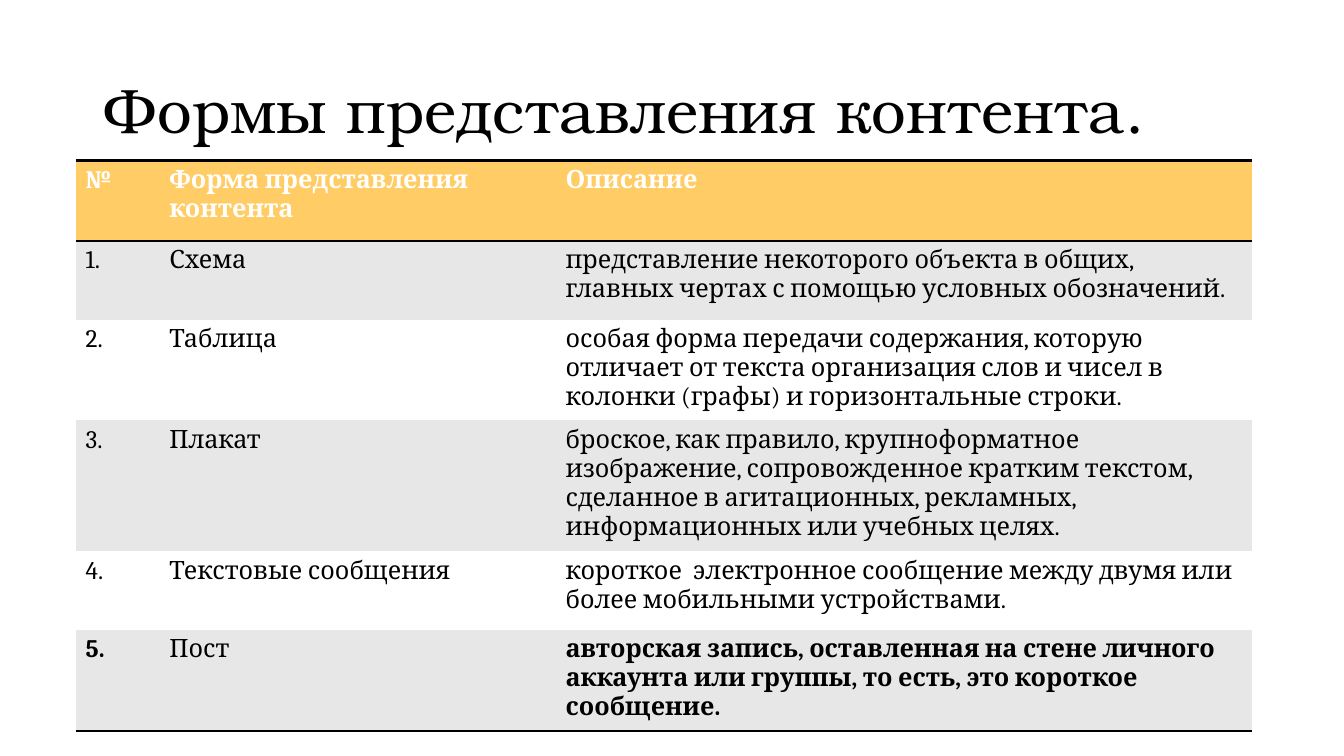
from typing import NamedTuple

from lxml import etree
from pptx import Presentation, util as u
from pptx.dml.color import RGBColor
from pptx.enum import text
from pptx.oxml.ns import qn

COLORS = {"black": "000000", "white": "FFFFFF", "amber": "FFCC66", "grey": "E7E7E7"}
NO_STYLE_NO_GRID = "{2D5ABB26-0587-4C30-8999-92F81FD0307C}"
COLUMN_WIDTHS = (0.83, 3.93, 6.91)


class Row(NamedTuple):
    height: float
    texts: tuple[str, str, str]
    fill: str
    color: str = "black"
    bold: tuple[bool, bool, bool] = (False, False, False)
    borders: tuple[str, ...] = ()


ROWS = [
    Row(0.8, ("№", "Форма представления контента", "Описание"),
        "amber", "white", (True, True, True), ("a:lnT", "a:lnB")),
    Row(0.78, ("1.", "Схема",
               "представление некоторого объекта в общих, главных чертах "
               "с помощью условных обозначений."), "grey"),
    Row(0.98, ("2.", "Таблица",
               "особая форма передачи содержания, которую отличает от текста "
               "организация слов и чисел в колонки (графы) и горизонтальные строки."),
        "white"),
    Row(1.28, ("3.", "Плакат",
               "броское, как правило, крупноформатное изображение, сопровожденное "
               "кратким текстом, сделанное в агитационных, рекламных, "
               "информационных или учебных целях."), "grey"),
    Row(0.78, ("4.", "Текстовые сообщения",
               "короткое  электронное сообщение между двумя или более "
               "мобильными устройствами."), "white"),
    Row(0.98, ("5.", "Пост",
               "авторская запись, оставленная на стене личного аккаунта или группы, "
               "то есть, это короткое сообщение."),
        "grey", bold=(True, False, True), borders=("a:lnB",)),
]


def rgb(name: str) -> RGBColor:
    return RGBColor.from_string(COLORS[name])


def add_run(p, content: str, color: str, **font_format) -> None:
    r = p.add_run()
    r.text = content
    r.font.color.rgb = rgb(color)
    for key, value in font_format.items():
        setattr(r.font, key, value)


def add_borders(cell, tags: tuple[str, ...]) -> None:
    """Put the border lines ahead of the cell's fill, as the schema orders them."""
    tc_pr = cell._tc.get_or_add_tcPr()
    for position, tag in enumerate(tags):
        ln = etree.Element(qn(tag), w=str(u.Pt(2)))
        fill = etree.SubElement(ln, qn("a:solidFill"))
        etree.SubElement(fill, qn("a:srgbClr"), val=COLORS["black"])
        tc_pr.insert(position, ln)


def add_title(s) -> None:
    box = s.shapes.add_textbox(u.Inches(0.92), u.Inches(0.4), u.Inches(11.5), u.Inches(1.45))
    tf = box.text_frame
    frame_format = {"word_wrap": True, "vertical_anchor": text.MSO_ANCHOR.MIDDLE}
    for key, value in frame_format.items():
        setattr(tf, key, value)
    p = tf.paragraphs[0]
    p.line_spacing = 0.9
    add_run(p, "Формы представления контента.", "black",
            name="TeX Gyre Bonum", size=u.Pt(44))


def add_content_table(s) -> None:
    frame = s.shapes.add_table(
        len(ROWS), len(COLUMN_WIDTHS), u.Inches(0.75), u.Inches(1.59),
        u.Inches(sum(COLUMN_WIDTHS)), u.Inches(sum(row.height for row in ROWS)))
    table = frame.table
    table._tbl.tblPr.find(qn("a:tableStyleId")).text = NO_STYLE_NO_GRID
    for column, width in zip(table.columns, COLUMN_WIDTHS):
        column.width = u.Inches(width)
    for table_row, row in zip(table.rows, ROWS):
        table_row.height = u.Inches(row.height)
        for cell, content, bold in zip(table_row.cells, row.texts, row.bold):
            cell.fill.solid()
            cell.fill.fore_color.rgb = rgb(row.fill)
            add_borders(cell, row.borders)
            add_run(cell.text_frame.paragraphs[0], content, row.color,
                    name="Cambria", size=u.Pt(18), bold=bold)


def main() -> None:
    prs = Presentation()
    prs.slide_width, prs.slide_height = u.Inches(13.33), u.Inches(7.5)
    s = prs.slides.add_slide(prs.slide_layouts[6])
    add_title(s)
    add_content_table(s)
    prs.save("out.pptx")


if __name__ == "__main__":
    main()
